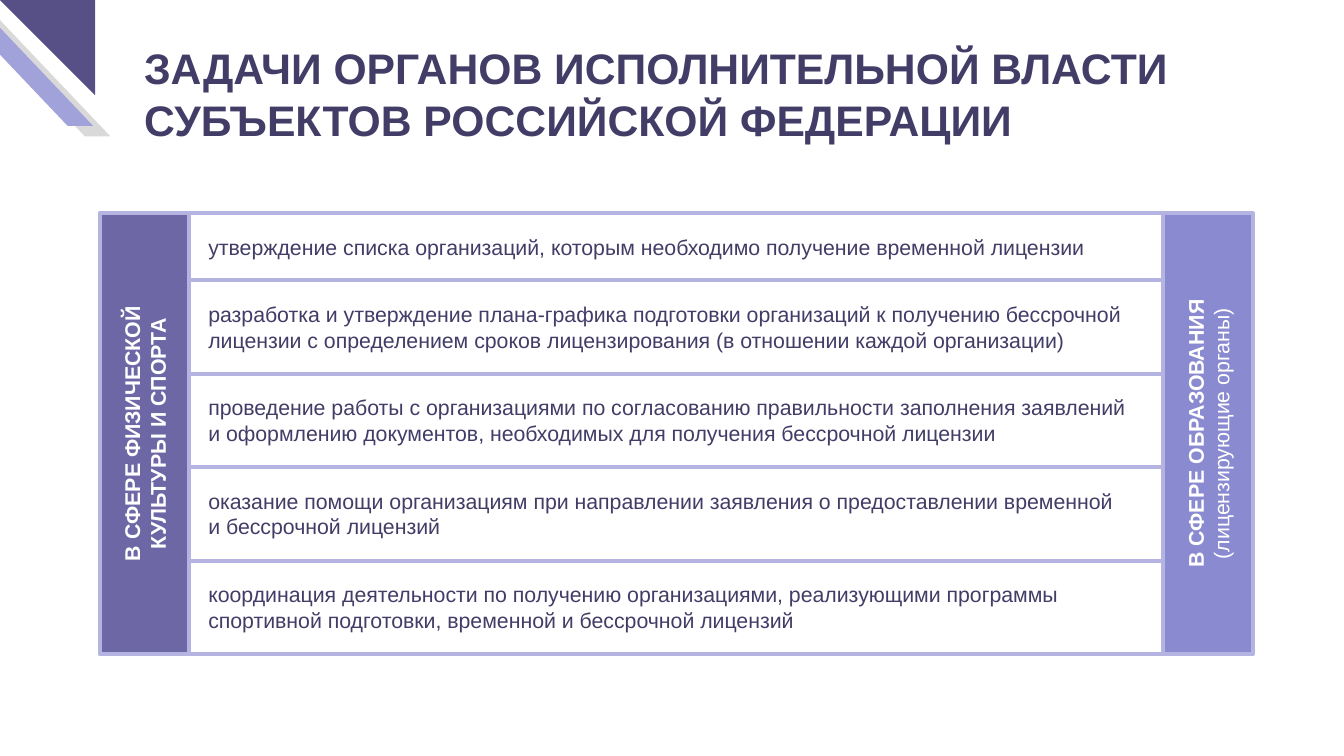
from lxml import etree
from pptx import Presentation
from pptx.dml.color import RGBColor
from pptx.enum.shapes import MSO_CONNECTOR, MSO_SHAPE
from pptx.enum.text import MSO_ANCHOR, MSO_AUTO_SIZE, PP_ALIGN
from pptx.oxml.ns import qn
from pptx.util import Inches, Pt

DARK = RGBColor(0x42, 0x3D, 0x67)
WHITE = RGBColor(0xFF, 0xFF, 0xFF)
BORDER = RGBColor(0xB4, 0xB3, 0xE1)
SPORT = RGBColor(0x6E, 0x67, 0xA5)
EDUCATION = RGBColor(0x8A, 0x8A, 0xD0)
CORNER = RGBColor(0x56, 0x50, 0x87)
STRIPE = RGBColor(0xA2, 0xA2, 0xDA)
GREY = RGBColor(0xD9, 0xD9, 0xD9)

# Content
TITLE = "ЗАДАЧИ ОРГАНОВ ИСПОЛНИТЕЛЬНОЙ ВЛАСТИ СУБЪЕКТОВ РОССИЙСКОЙ ФЕДЕРАЦИИ"
TASKS = [  # text, box width, box height
    ("утверждение списка организаций, которым необходимо получение временной лицензии", 10.3, 0.37),
    ("разработка и утверждение плана-графика подготовки организаций к получению бессрочной "
     "лицензии с определением сроков лицензирования (в отношении каждой организации)", 10.5, 0.64),
    ("проведение работы с организациями по согласованию правильности заполнения заявлений "
     "и оформлению документов, необходимых для получения бессрочной лицензии", 9.96, 0.64),
    ("оказание помощи организациям при направлении заявления о предоставлении временной "
     "и бессрочной лицензий", 9.78, 0.64),
    ("координация деятельности по получению организациями, реализующими программы "
     "спортивной подготовки, временной и бессрочной лицензий", 10.3, 0.64),
]
COLUMNS = [  # left, fill, text, bold flag of each run
    (1.04, SPORT, "В СФЕРЕ ФИЗИЧЕСКОЙ\nКУЛЬТУРЫ И СПОРТА", (True, True)),
    (12.12, EDUCATION, "В СФЕРЕ ОБРАЗОВАНИЯ\v(лицензирующие органы)", (True, False)),
]
STRIPES = [(-0.36, 0.11, GREY), (-0.54, 0, STRIPE)]

# Layout
ROWS_LEFT, ROWS_RIGHT = 1.97, 12.28
TOP, FIRST_EDGE, BOTTOM = 2.22, 2.92, 6.81
STEP = (BOTTOM - FIRST_EDGE) / (len(TASKS) - 1)
EDGES = [TOP] + [FIRST_EDGE + STEP * i for i in range(len(TASKS))]

presentation = Presentation()
presentation.slide_width, presentation.slide_height = Inches(14), Inches(7.87)
slide = presentation.slides.add_slide(presentation.slide_layouts[6])
shapes = slide.shapes


def add_filled(kind, left, top, width, height, fill):
    shape = shapes.add_shape(kind, Inches(left), Inches(top), Inches(width), Inches(height))
    shape.shadow.inherit = False
    shape.fill.solid()
    shape.fill.fore_color.rgb = fill
    shape.line.fill.background()
    return shape


def format_run(run, size, color, bold):
    run.font.name, run.font.size, run.font.bold = "Arial", Pt(size), bold
    run.font.color.rgb = color


def add_text(text, left, top, width, height, inset, size, bold):
    box = shapes.add_textbox(Inches(left), Inches(top), Inches(width), Inches(height))
    frame = box.text_frame
    frame.word_wrap = True
    frame.auto_size = MSO_AUTO_SIZE.SHAPE_TO_FIT_TEXT
    frame.margin_left = Inches(inset)
    frame.text = text
    format_run(frame.paragraphs[0].runs[0], size, DARK, bold)


# Corner decoration
for left, top, color in STRIPES:
    stripe = add_filled(MSO_SHAPE.PARALLELOGRAM, left, top, 1.51, 1.31, color)
    stripe.adjustments[0] = 0.95
    stripe._element.spPr.find(qn("a:xfrm")).set("flipH", "1")
corner = add_filled(MSO_SHAPE.RIGHT_TRIANGLE, 0, 0, 0.99, 0.99, CORNER)
corner.rotation = 180

# Row dividers
for edge in EDGES:
    divider = shapes.add_connector(MSO_CONNECTOR.STRAIGHT, Inches(ROWS_LEFT), Inches(edge),
                                   Inches(ROWS_RIGHT), Inches(edge))
    divider.line.color.rgb = BORDER
    divider.line.width = Pt(3)
    etree.SubElement(divider._element.spPr, qn("a:effectLst"))

# Tasks, each centred between its dividers
for (text, width, height), upper, lower in zip(TASKS, EDGES, EDGES[1:]):
    add_text(text, ROWS_LEFT, (upper + lower - height) / 2, width, height, 0.2, 16, False)

# Title
add_text(TITLE, 1.5, 0.39, 10.98, 1.18, 0, 32, True)

# Side columns with vertical text
for left, fill, text, bolds in COLUMNS:
    column = add_filled(MSO_SHAPE.RECTANGLE, left, TOP, 0.93, BOTTOM - TOP, fill)
    column.line.color.rgb = BORDER
    column.line.width = Pt(3)
    frame = column.text_frame
    frame.text = text
    frame.vertical_anchor = MSO_ANCHOR.MIDDLE
    frame._txBody.bodyPr.set("vert", "vert270")
    for paragraph in frame.paragraphs:
        paragraph.alignment = PP_ALIGN.CENTER
    runs = [run for paragraph in frame.paragraphs for run in paragraph.runs]
    for run, bold in zip(runs, bolds):
        format_run(run, 16, WHITE, bold)

presentation.save("out.pptx")
